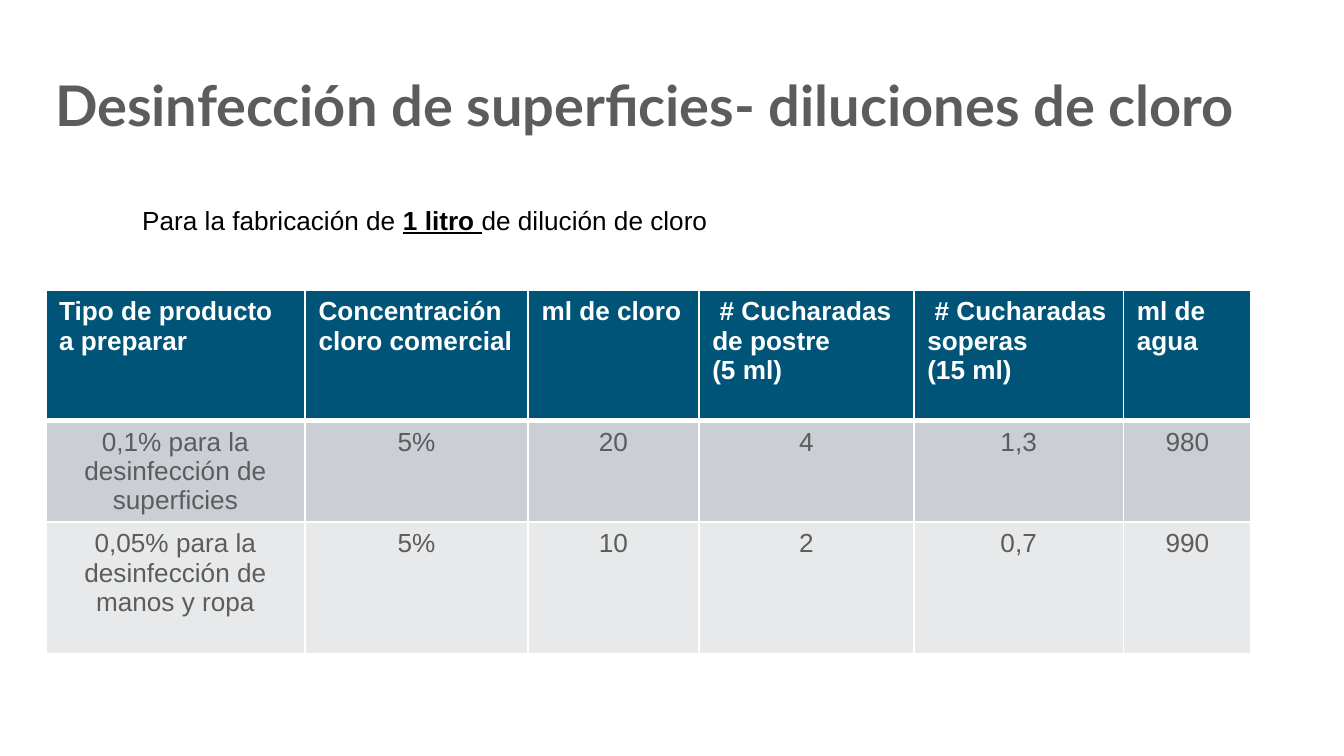
from lxml import etree
from pptx import Presentation
from pptx.dml.color import RGBColor as RGB
from pptx.enum.text import MSO_ANCHOR as Anchor, PP_ALIGN as Align
from pptx.oxml.ns import qn
from pptx.util import Inches, Pt

WHITE = RGB(0xFF, 0xFF, 0xFF)
BLACK = RGB(0, 0, 0)
GRAY = RGB(0x5C, 0x5C, 0x5C)
BLUE = RGB(0x00, 0x54, 0x78)
DARK = RGB(0xCC, 0xCE, 0xD6)
PALE = RGB(0xE7, 0xE9, 0xEB)

HEADS = ["Tipo de producto a preparar", "Concentración cloro comercial",
         "ml de cloro", " # Cucharadas de postre\v(5 ml)",
         " # Cucharadas soperas\v(15 ml)", "ml de agua"]
ROWS = [
    HEADS,
    ["0,1% para la desinfección de superficies", "5%", "20", "4", "1,3", "980"],
    ["0,05% para la desinfección de manos y ropa", "5%", "10", "2", "0,7", "990"],
]
WIDTHS = [1.93, 1.66, 1.27, 1.6, 1.56, 0.95]
HEIGHTS = [0.97, 0.75, 0.98]


def write(par, text, size=14, font="Arial", color=BLACK, bold=False,
          under=False, align=Align.LEFT):
    par.alignment = align
    for i, part in enumerate(text.split("\v")):
        if i:
            par.add_line_break()
        run = par.add_run()
        run.text = part
        run.font.size = Pt(size)
        run.font.name = font
        run.font.color.rgb = color
        run.font.bold = bold
        run.font.underline = under


def edge(cell, side, width):
    props = cell._tc.get_or_add_tcPr()
    line = etree.SubElement(props, qn("a:ln" + side), w=str(Pt(width)))
    fill = etree.SubElement(line, qn("a:solidFill"))
    etree.SubElement(fill, qn("a:srgbClr"), val=str(WHITE))


class Deck:
    def __init__(self, wide):
        self.show = Presentation()
        self.show.slide_width = Inches(wide)
        self.show.slide_height = Inches(wide * 9 / 16)
        self.slide = self.show.slides.add_slide(self.show.slide_layouts[5])

    def title(self, text, *box):
        shape = self.slide.shapes.title
        shape.left, shape.top, shape.width, shape.height = map(Inches, box)
        frame = shape.text_frame
        frame.word_wrap = True
        frame.vertical_anchor = Anchor.MIDDLE
        frame.margin_left = frame.margin_right = Inches(0.07)
        frame.margin_top = frame.margin_bottom = Inches(0.04)
        par = frame.paragraphs[0]
        par.line_spacing = 0.9
        write(par, text, size=30, font="Lato", color=GRAY, bold=True)

    def note(self, parts, *box):
        frame = self.slide.shapes.add_textbox(*map(Inches, box)).text_frame
        frame.word_wrap = True
        for text, strong in parts:
            write(frame.paragraphs[0], text, bold=strong, under=strong)

    def table(self, left, top):
        grid = self.slide.shapes.add_table(
            len(ROWS), len(WIDTHS), Inches(left), Inches(top),
            Inches(sum(WIDTHS)), Inches(sum(HEIGHTS))).table
        for col, width in zip(grid.columns, WIDTHS):
            col.width = Inches(width)
        for row, high in zip(grid.rows, HEIGHTS):
            row.height = Inches(high)
        for r, texts in enumerate(ROWS):
            for c, text in enumerate(texts):
                self.cell(grid.cell(r, c), text, r)

    def cell(self, cell, text, row):
        head = row == 0
        for side in "LRTB":
            thick = (row, side) in [(0, "B"), (1, "T")]
            edge(cell, side, 3 if thick else 1)
        cell.fill.solid()
        cell.fill.fore_color.rgb = (BLUE, DARK, PALE)[row]
        write(cell.text_frame.paragraphs[0], text, bold=head,
              color=WHITE if head else GRAY,
              align=Align.LEFT if head else Align.CENTER)


def main():
    deck = Deck(10)
    deck.title("Desinfección de superficies- diluciones de cloro",
               0.34, 0.49, 9.32, 0.63)
    deck.table(0.34, 2.16)
    deck.note([("Para la fabricación de ", False), ("1 litro ", True),
               ("de dilución de cloro", False)], 0.96, 1.47, 7.69, 0.34)
    deck.show.save("out.pptx")


if __name__ == "__main__":
    main()
